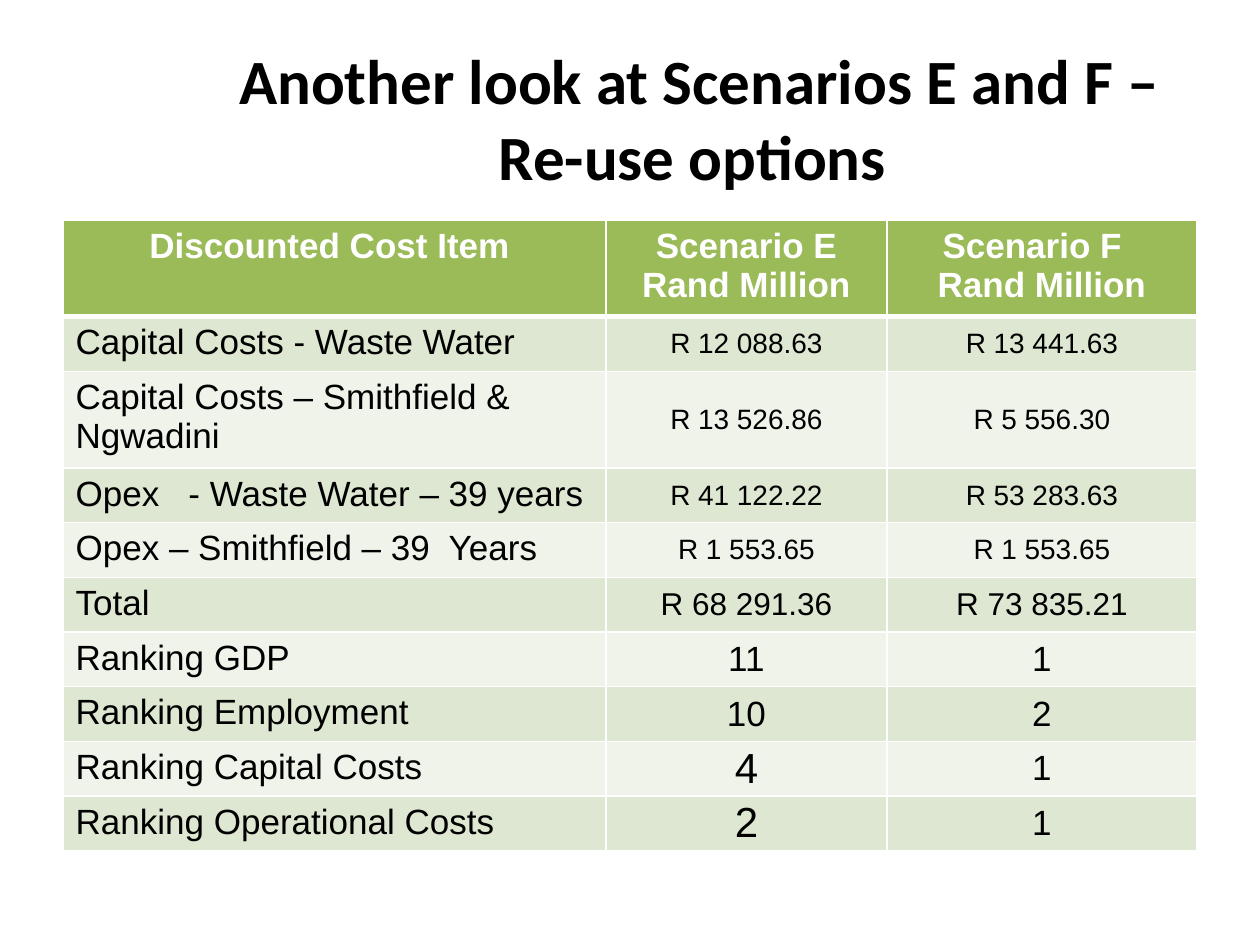
from lxml import etree
from pptx import Presentation
from pptx.dml.color import RGBColor
from pptx.enum.text import MSO_ANCHOR, PP_ALIGN
from pptx.oxml.ns import qn
from pptx.util import Emu, Pt

CENTER, LEFT = PP_ALIGN.CENTER, PP_ALIGN.LEFT
TOP, MIDDLE = MSO_ANCHOR.TOP, MSO_ANCHOR.MIDDLE
PX = 914400 // 126

COLORS = {"text": "000000", "white": "FFFFFF", "header": "9BBB59",
          "odd": "DEE7D1", "even": "EFF3EA"}

TITLE = "Another look at Scenarios E and F – Re-use options "
HEADER = ("Discounted Cost Item ", "Scenario E\nRand Million", "Scenario F  \nRand Million")
# Label, scenario E, scenario F, text size of E, text size of F
ROWS = [
    ("Capital Costs - Waste Water", "R 12 088.63", "R 13 441.63", 16, 16),
    ("Capital Costs – Smithfield & Ngwadini", "R 13 526.86", "R 5 556.30", 16, 16),
    ("Opex   - Waste Water – 39 years", "R 41 122.22", "R 53 283.63", 16, 16),
    ("Opex – Smithfield – 39  Years", "R 1 553.65", "R 1 553.65", 16, 16),
    ("Total", "R 68 291.36", "R 73 835.21", 18, 18),
    ("Ranking GDP", "11", "1", 20, 20),
    ("Ranking Employment", "10", "2", 20, 20),
    ("Ranking Capital Costs", "4", "1", 24, 20),
    ("Ranking Operational Costs", "2", "1", 24, 20),
]
LABEL_SIZE = 20
COLUMN_WIDTHS = (543, 281, 310)
ROW_HEIGHT, TWO_LINE_HEIGHT = 52, 91
TWO_LINE_ROWS = (0, 2)
TABLE_LEFT, TABLE_TOP = 63, 220


def px(length):
    return Emu(length * PX)


def style_text(text_frame, font_name, size, color, bold=False, align=CENTER):
    for paragraph in text_frame.paragraphs:
        paragraph.alignment = align
        for run in paragraph.runs:
            run.font.name = font_name
            run.font.size = Pt(size)
            run.font.bold = bold
            run.font.color.rgb = RGBColor.from_string(COLORS[color])


def set_borders(cell, top, bottom):
    """Draw white borders; top and bottom are widths in points."""
    properties = cell._tc.get_or_add_tcPr()
    widths = {"a:lnL": 1, "a:lnR": 1, "a:lnT": top, "a:lnB": bottom}
    for position, (tag, width) in enumerate(widths.items()):
        line = etree.Element(qn(tag), w=str(Pt(width)))
        fill = etree.SubElement(line, qn("a:solidFill"))
        etree.SubElement(fill, qn("a:srgbClr"), val=COLORS["white"])
        properties.insert(position, line)


def add_title(slide):
    box = slide.shapes.add_textbox(px(202), px(38), px(995), px(158))
    text_frame = box.text_frame
    text_frame.word_wrap = True
    text_frame.vertical_anchor = MIDDLE
    text_frame.text = TITLE
    style_text(text_frame, "Calibri", 36, "text", bold=True)


def fill_cell(cell, row, column, text, size):
    is_header, is_value = row == 0, row > 0 and column > 0
    cell.text_frame.text = text
    style_text(cell.text_frame, "Arial", size, "white" if is_header else "text",
               bold=is_header, align=CENTER if is_header or is_value else LEFT)
    cell.vertical_anchor = MIDDLE if is_value else TOP
    if is_value:
        cell.margin_left = cell.margin_right = cell.margin_top = cell.margin_bottom = 0
    cell.fill.solid()
    fill = "header" if is_header else "odd" if row % 2 else "even"
    cell.fill.fore_color.rgb = RGBColor.from_string(COLORS[fill])
    set_borders(cell, top=3 if row == 1 else 1, bottom=3 if is_header else 1)


def add_cost_table(slide):
    rows = [(*HEADER, LABEL_SIZE, LABEL_SIZE), *ROWS]
    heights = [TWO_LINE_HEIGHT if row in TWO_LINE_ROWS else ROW_HEIGHT
               for row in range(len(rows))]
    table = slide.shapes.add_table(
        len(rows), len(COLUMN_WIDTHS), px(TABLE_LEFT), px(TABLE_TOP),
        px(sum(COLUMN_WIDTHS)), px(sum(heights))).table
    for column, width in zip(table.columns, COLUMN_WIDTHS):
        column.width = px(width)
    for row, (label, value_e, value_f, size_e, size_f) in enumerate(rows):
        table.rows[row].height = px(heights[row])
        contents = ((label, LABEL_SIZE), (value_e, size_e), (value_f, size_f))
        for column, (text, size) in enumerate(contents):
            fill_cell(table.cell(row, column), row, column, text, size)


def main():
    presentation = Presentation()
    presentation.slide_width, presentation.slide_height = px(1260), px(945)
    slide = presentation.slides.add_slide(presentation.slide_layouts[6])
    add_title(slide)
    add_cost_table(slide)
    presentation.save("out.pptx")


if __name__ == "__main__":
    main()
